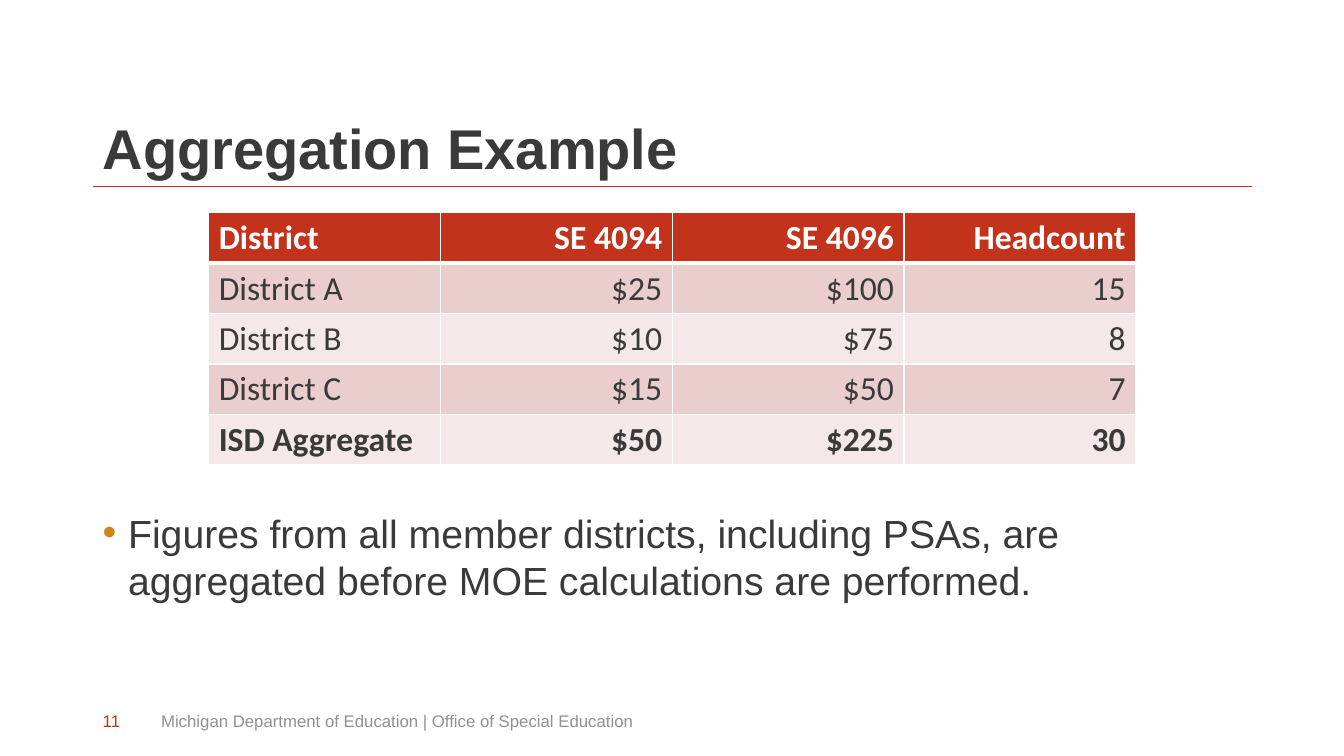
from lxml import etree
from pptx import Presentation
from pptx.dml.color import RGBColor
from pptx.enum import shapes, text
from pptx.oxml import ns
from pptx.util import Cm, Pt

RED, DARK, WHITE, GREY, GOLD = "C3321B", "3A3A3A", "FFFFFF", "919191", "D1831E"
BANDS = ("E9CECD", "F5E8E8")
LEFT, WIDTH = 2.34, 29.21
ROWS = [
    ("District", "SE 4094", "SE 4096", "Headcount"),
    ("District A", "$25", "$100", "15"),
    ("District B", "$10", "$75", "8"),
    ("District C", "$15", "$50", "7"),
    ("ISD Aggregate", "$50", "$225", "30"),
]


def rgb(value):
    """Turn a hex string into a colour."""
    return RGBColor.from_string(value)


def sub(parent, tag, **attrs):
    """Append a drawing element with the given attributes."""
    el = etree.SubElement(parent, ns.qn(tag))
    for name, value in attrs.items():
        el.set(name, str(value))
    return el


def style(p, size, color, font="Arial", bold=False):
    """Format every run of a paragraph."""
    for r in p.runs:
        r.font.size = Pt(size)
        r.font.name = font
        r.font.bold = bold
        r.font.color.rgb = rgb(color)


def add_text(s, box, content, size, color, anchor=text.MSO_ANCHOR.TOP, bold=False):
    """Add a wrapped text box and return its paragraph."""
    tf = s.shapes.add_textbox(*map(Cm, box)).text_frame
    tf.word_wrap = True
    tf.vertical_anchor = anchor
    p = tf.paragraphs[0]
    p.text = content
    style(p, size, color, bold=bold)
    return p


def add_bullet(p, color, indent):
    """Give a paragraph a coloured bullet with a hanging indent."""
    pPr = p._p.get_or_add_pPr()
    pPr.set("marL", str(Cm(indent)))
    pPr.set("indent", str(-Cm(indent)))
    sub(sub(pPr, "a:buClr"), "a:srgbClr", val=color)
    sub(pPr, "a:buFont", typeface="Arial")
    sub(pPr, "a:buChar", char="•")


def add_rule(s, x, y, width, color):
    """Draw a thin horizontal line."""
    line = s.shapes.add_connector(
        shapes.MSO_CONNECTOR.STRAIGHT, Cm(x), Cm(y), Cm(x + width), Cm(y))
    line.line.color.rgb = rgb(color)
    line.line.width = Pt(0.5)
    sub(line._element.spPr, "a:effectLst")


def set_borders(cell, bottom):
    """Give a cell white borders with its own bottom width."""
    tcPr = cell._tc.get_or_add_tcPr()
    widths = {"a:lnL": 1, "a:lnR": 1, "a:lnT": 1, "a:lnB": bottom}
    for tag, width in widths.items():
        ln = sub(tcPr, tag, w=Pt(width))
        sub(sub(ln, "a:solidFill"), "a:srgbClr", val=WHITE)


def add_table(s, x, y, col_width, row_height):
    """Add the district table with a red header and banded rows."""
    n_rows, n_cols = len(ROWS), len(ROWS[0])
    table = s.shapes.add_table(
        n_rows, n_cols, Cm(x), Cm(y),
        Cm(col_width * n_cols), Cm(row_height * n_rows)).table
    for i, row in enumerate(ROWS):
        header = i == 0
        for j, value in enumerate(row):
            cell = table.cell(i, j)
            set_borders(cell, 3 if header else 1)
            cell.fill.solid()
            cell.fill.fore_color.rgb = rgb(RED if header else BANDS[(i - 1) % 2])
            p = cell.text_frame.paragraphs[0]
            p.text = value
            if j:
                p.alignment = text.PP_ALIGN.RIGHT
            style(p, 24, WHITE if header else DARK, "Calibri",
                  i in (0, n_rows - 1))


def main():
    """Build the slide and save it."""
    prs = Presentation()
    prs.slide_width, prs.slide_height = Cm(33.87), Cm(19.05)
    s = prs.slides.add_slide(prs.slide_layouts[6])
    middle = text.MSO_ANCHOR.MIDDLE
    add_rule(s, LEFT, 4.7, WIDTH, RED)
    title = add_text(s, (LEFT, 1.02, WIDTH, 3.68), "Aggregation Example",
                     40, DARK, text.MSO_ANCHOR.BOTTOM, True)
    title.line_spacing = 0.9
    add_table(s, 5.26, 5.36, 5.84, 1.27)
    note = add_text(
        s, (LEFT, 12.7, WIDTH, 4.47),
        "Figures from all member districts, including PSAs, are "
        "aggregated before MOE calculations are performed.", 28, DARK)
    add_bullet(note, GOLD, 0.64)
    add_text(s, (LEFT, 17.65, 1.14, 1.02), "11", 12, RED, middle)
    add_text(s, (3.81, 17.65, 21.31, 1.02),
             "Michigan Department of Education | Office of Special Education",
             12, GREY, middle)
    prs.save("out.pptx")


if __name__ == "__main__":
    main()
